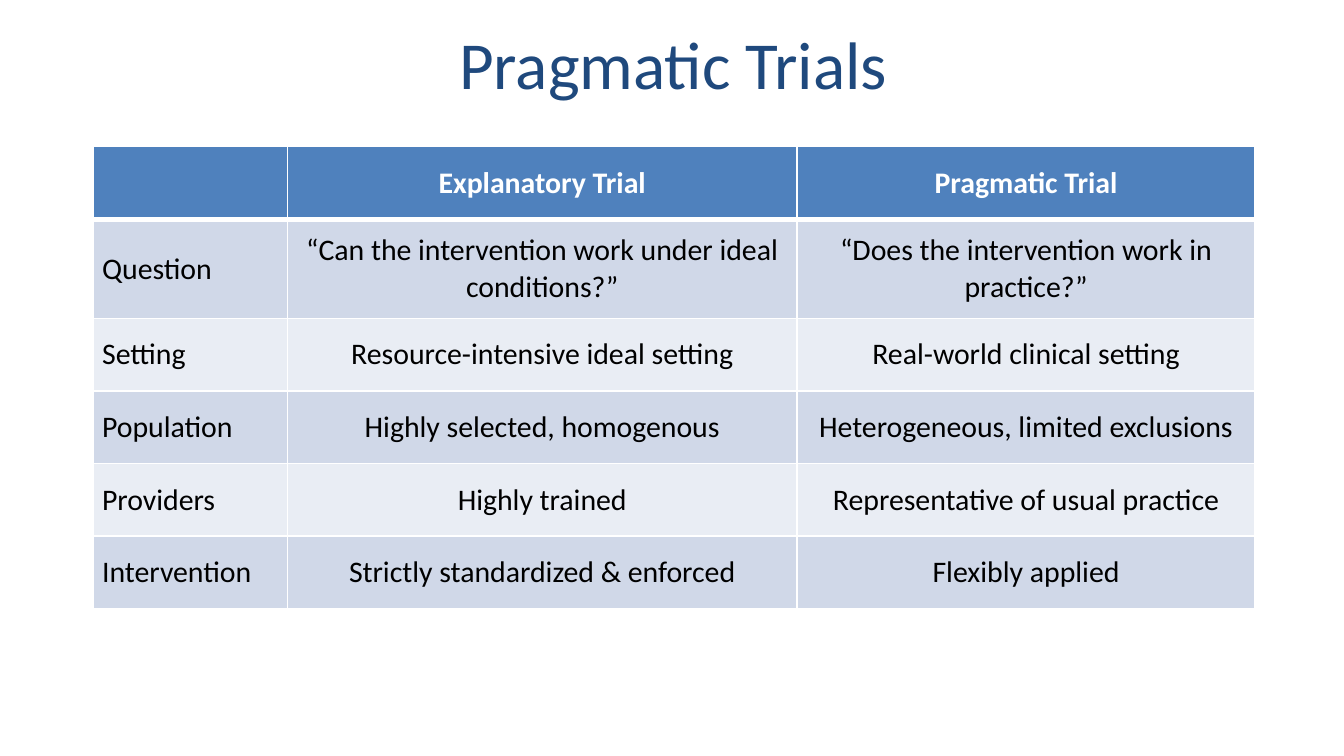
"""Build a slide with a table that compares explanatory and pragmatic trials."""
from lxml import etree
from pptx import Presentation
from pptx.dml.color import RGBColor
from pptx.enum.text import MSO_ANCHOR, PP_ALIGN
from pptx.oxml.ns import qn
from pptx.util import Inches, Pt

LEFT, CENTER = PP_ALIGN.LEFT, PP_ALIGN.CENTER
TOP, MIDDLE = MSO_ANCHOR.TOP, MSO_ANCHOR.MIDDLE
WHITE = RGBColor(0xFF, 0xFF, 0xFF)
BLACK = RGBColor(0x00, 0x00, 0x00)
NAVY = RGBColor(0x1F, 0x49, 0x7D)
BLUE = RGBColor(0x4F, 0x81, 0xBD)
BANDS = RGBColor(0xE9, 0xED, 0xF4), RGBColor(0xD0, 0xD8, 0xE8)

WIDTH = Inches(10)
HEIGHT = WIDTH * 9 // 16
COLS = 1.45, 3.79, 3.41
HEIGHTS = 0.54, 0.74, 0.54, 0.54, 0.54, 0.54
ROWS = (
    ("", "Explanatory Trial", "Pragmatic Trial"),
    ("Question", "“Can the intervention work under ideal conditions?”",
     "“Does the intervention work in practice?”"),
    ("Setting", "Resource-intensive ideal setting", "Real-world clinical setting"),
    ("Population", "Highly selected, homogenous", "Heterogeneous, limited exclusions"),
    ("Providers", "Highly trained", "Representative of usual practice"),
    ("Intervention", "Strictly standardized & enforced", "Flexibly applied"),
)


def write(frame, text, font="Calibri", size=16, color=BLACK, bold=False, align=CENTER):
    para = frame.paragraphs[0]
    para.alignment = align
    para.font.size = Pt(size)
    if text:
        run = para.add_run()
        run.text = text
        run.font.name = font
        run.font.size = Pt(size)
        run.font.bold = bold
        run.font.color.rgb = color


class Page:
    def __init__(self, slide, font):
        self.slide = slide
        self.font = font

    def title(self, text, x, y, w, h):
        box = self.slide.shapes.add_textbox(Inches(x), Inches(y), Inches(w), Inches(h))
        frame = box.text_frame
        frame.word_wrap = True
        frame.vertical_anchor = TOP
        write(frame, text, font=self.font, size=36, color=NAVY)

    def table(self, rows, x, y, cols, heights):
        frame = self.slide.shapes.add_table(
            len(rows), len(cols), Inches(x), Inches(y),
            Inches(sum(cols)), Inches(sum(heights)))
        grid = frame.table
        for col, width in zip(grid.columns, cols):
            col.width = Inches(width)
        for row, height in zip(grid.rows, heights):
            row.height = Inches(height)
        for r, texts in enumerate(rows):
            for c, text in enumerate(texts):
                self.cell(grid.cell(r, c), text, r, c)

    def cell(self, cell, text, r, c):
        head = r == 0
        cell.vertical_anchor = MIDDLE
        cell.margin_left = cell.margin_right = Inches(0.07)
        cell.margin_top = cell.margin_bottom = Inches(0.04)
        self.edge(cell, "lnL", 1)
        self.edge(cell, "lnR", 1)
        self.edge(cell, "lnT", 3 if r == 1 else 1)
        self.edge(cell, "lnB", 3 if head else 1)
        cell.fill.solid()
        cell.fill.fore_color.rgb = BLUE if head else BANDS[r % 2]
        write(cell.text_frame, text, font=self.font, bold=head,
              color=WHITE if head else BLACK,
              align=CENTER if head or c else LEFT)

    def edge(self, cell, side, width):
        props = cell._tc.get_or_add_tcPr()
        line = etree.SubElement(props, qn(f"a:{side}"), w=str(Pt(width)))
        fill = etree.SubElement(line, qn("a:solidFill"))
        etree.SubElement(fill, qn("a:srgbClr"), val=str(WHITE))


def main():
    deck = Presentation()
    deck.slide_width, deck.slide_height = WIDTH, HEIGHT
    page = Page(deck.slides.add_slide(deck.slide_layouts[6]), "Calibri")
    page.table(ROWS, 0.69, 1.09, COLS, HEIGHTS)
    page.title("Pragmatic Trials", 0.19, 0.12, 9.64, 0.77)
    deck.save("out.pptx")


if __name__ == "__main__":
    main()
